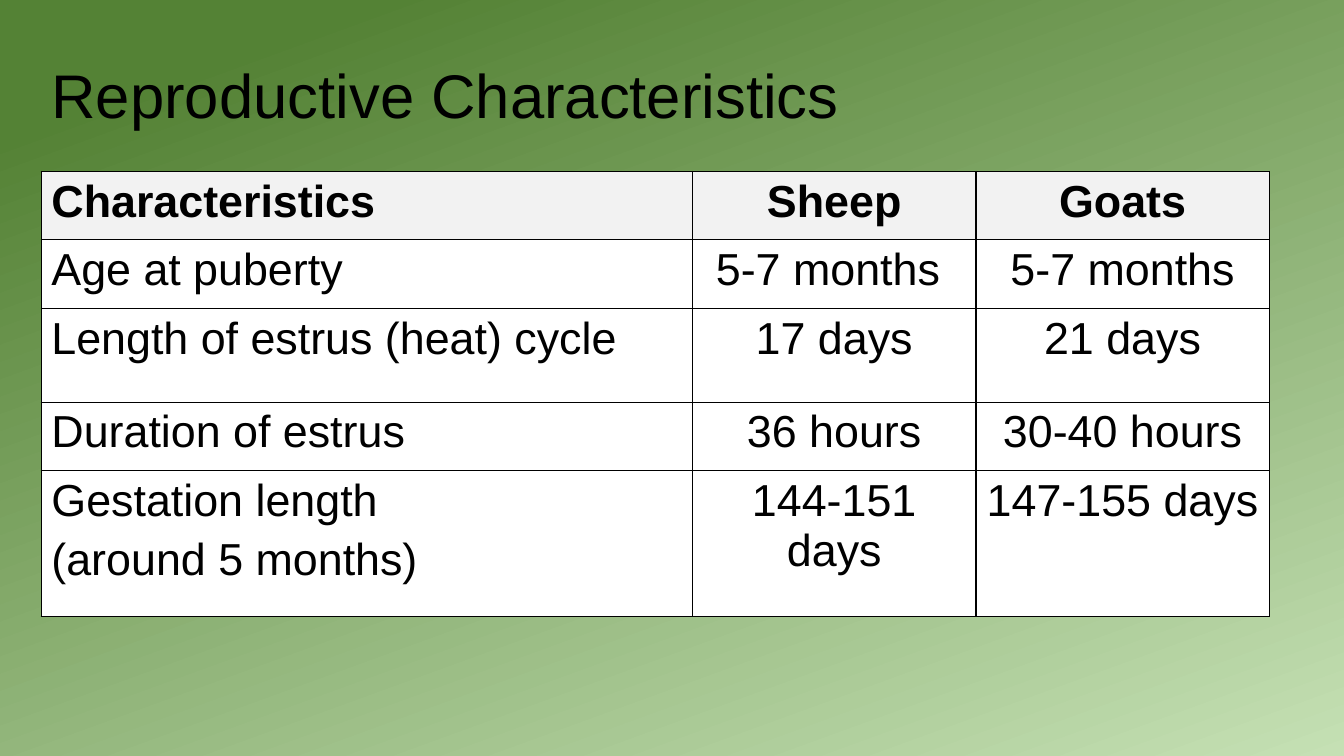
from lxml import etree
from pptx import Presentation
from pptx.dml.color import RGBColor
from pptx.enum.text import MSO_ANCHOR, PP_ALIGN
from pptx.oxml.ns import qn
from pptx.util import Inches, Pt

TITLE = "Reproductive Characteristics"
ROWS = [
    ("Characteristics", "Sheep", "Goats"),
    ("Age at puberty", "5-7 months ", "5-7 months"),
    ("Length of estrus (heat) cycle", "17 days", "21 days"),
    ("Duration of estrus", "36 hours", "30-40 hours"),
    ("Gestation length\n(around 5 months)", "144-151 days", "147-155 days"),
]
COLUMN_WIDTHS = (6.46, 2.81, 2.91)
ROW_HEIGHTS = (0.68, 0.68, 0.93, 0.68, 1.45)
LEFT, TITLE_TOP, TABLE_TOP = 0.41, 0.25, 1.7

FONT = "Arial"
BLACK = RGBColor(0x00, 0x00, 0x00)
WHITE = RGBColor(0xFF, 0xFF, 0xFF)
HEADER_GREY = RGBColor(0xF2, 0xF2, 0xF2)
DARK_GREEN = RGBColor(0x54, 0x82, 0x35)
LIGHT_GREEN = RGBColor(0xC5, 0xE0, 0xB4)
GRADIENT = ((0.11, DARK_GREEN), (1, LIGHT_GREEN))
MIDDLE = MSO_ANCHOR.MIDDLE
ALIGN_LEFT, ALIGN_CENTER = PP_ALIGN.LEFT, PP_ALIGN.CENTER


def paint_background(slide):
    """Fill the slide with the green gradient."""
    fill = slide.background.fill
    fill.gradient()
    fill.gradient_angle = 290
    for stop, (position, color) in zip(fill.gradient_stops, GRADIENT):
        stop.position = position
        stop.color.rgb = color


def style_runs(paragraph, size, bold=False):
    """Format every run of a paragraph."""
    for run in paragraph.runs:
        run.font.name = FONT
        run.font.size = Pt(size)
        run.font.bold = bold
        run.font.color.rgb = BLACK


def add_title(slide):
    """Place and format the title."""
    title = slide.shapes.title
    title.left, title.top = Inches(LEFT), Inches(TITLE_TOP)
    title.width, title.height = Inches(11.5), Inches(1.45)
    title.text_frame.text = TITLE
    title.text_frame.vertical_anchor = MIDDLE
    paragraph = title.text_frame.paragraphs[0]
    paragraph.alignment = ALIGN_LEFT
    paragraph.line_spacing = 0.9
    style_runs(paragraph, 44)


def add_borders(cell):
    """Draw a thin black line on each side of a cell."""
    properties = cell._tc.get_or_add_tcPr()
    for index, side in enumerate(("a:lnL", "a:lnR", "a:lnT", "a:lnB")):
        line = etree.Element(qn(side), w=str(Pt(1)))
        fill = etree.SubElement(line, qn("a:solidFill"))
        etree.SubElement(fill, qn("a:srgbClr"), val=str(BLACK))
        properties.insert(index, line)


def fill_cell(cell, text, is_header, alignment):
    """Write and format one table cell."""
    cell.text_frame.text = text
    cell.fill.solid()
    cell.fill.fore_color.rgb = HEADER_GREY if is_header else WHITE
    add_borders(cell)
    for index, paragraph in enumerate(cell.text_frame.paragraphs):
        paragraph.alignment = alignment
        paragraph.space_before = Pt(6.4 if index else 0)
        style_runs(paragraph, 32, is_header)


def add_characteristics_table(slide):
    """Build the comparison of sheep and goats."""
    table = slide.shapes.add_table(
        len(ROWS), len(COLUMN_WIDTHS), Inches(LEFT), Inches(TABLE_TOP),
        Inches(sum(COLUMN_WIDTHS)), Inches(sum(ROW_HEIGHTS))).table
    for column, width in zip(table.columns, COLUMN_WIDTHS):
        column.width = Inches(width)
    for row, height in zip(table.rows, ROW_HEIGHTS):
        row.height = Inches(height)
    for row_index, texts in enumerate(ROWS):
        for column_index, text in enumerate(texts):
            alignment = ALIGN_CENTER if column_index else ALIGN_LEFT
            fill_cell(table.cell(row_index, column_index), text,
                      row_index == 0, alignment)


def main():
    """Create and save the slide."""
    presentation = Presentation()
    presentation.slide_width = Inches(13.33)
    presentation.slide_height = Inches(7.5)
    slide = presentation.slides.add_slide(presentation.slide_layouts[5])
    paint_background(slide)
    add_title(slide)
    add_characteristics_table(slide)
    presentation.save("out.pptx")


if __name__ == "__main__":
    main()
